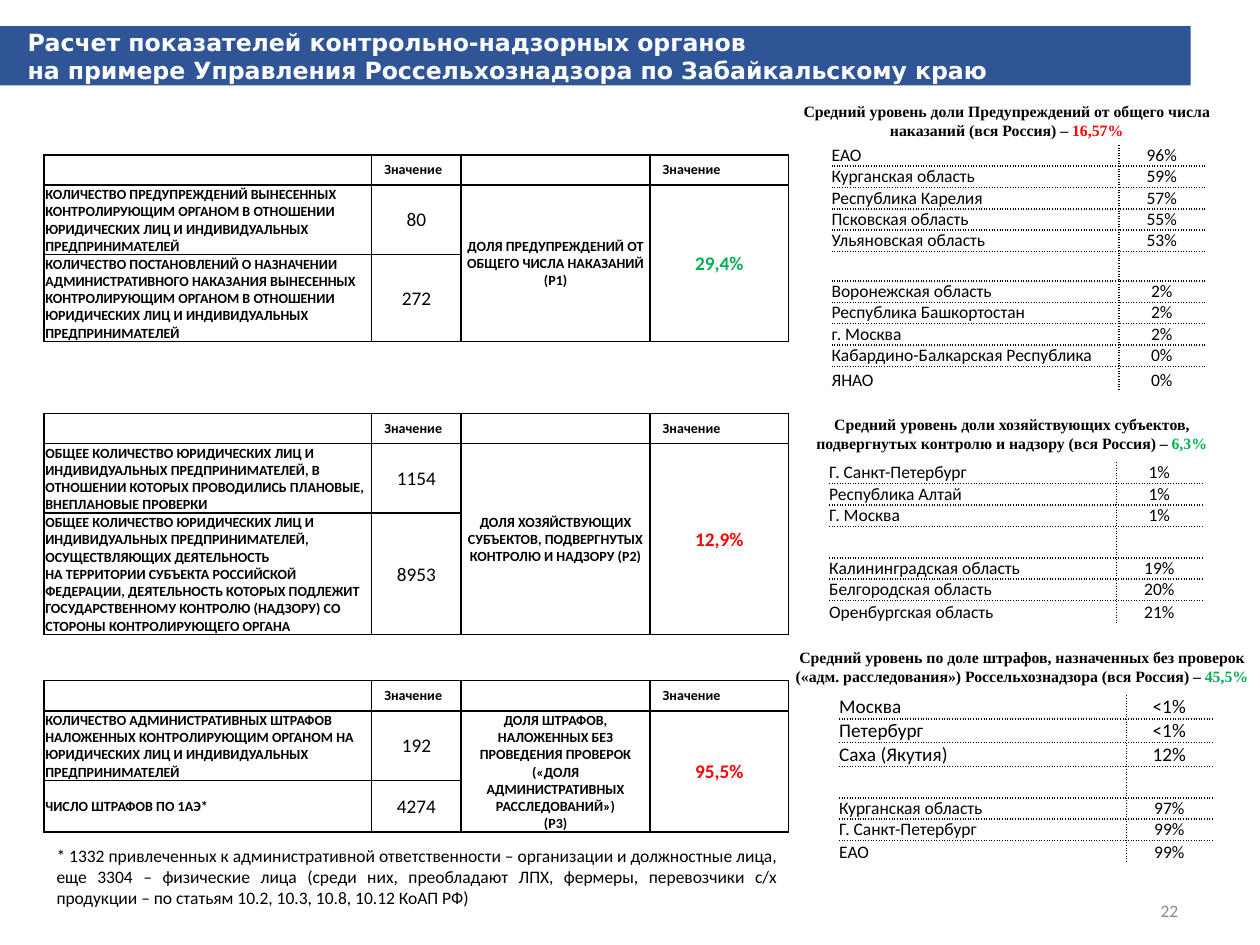
from dataclasses import dataclass

from lxml import etree
from pptx import Presentation
from pptx.dml.color import RGBColor
from pptx.enum.shapes import MSO_SHAPE
from pptx.enum.text import MSO_ANCHOR, PP_ALIGN
from pptx.oxml.ns import qn
from pptx.util import Pt

RECT = MSO_SHAPE.RECTANGLE
TOP, MID, LOW = MSO_ANCHOR.TOP, MSO_ANCHOR.MIDDLE, MSO_ANCHOR.BOTTOM
LEFT, MIDDLE, RIGHT, FLUSH = PP_ALIGN.LEFT, PP_ALIGN.CENTER, PP_ALIGN.RIGHT, PP_ALIGN.JUSTIFY
BLACK = RGBColor(0, 0, 0)
WHITE = RGBColor(255, 255, 255)
BLUE = RGBColor(0x2F, 0x55, 0x97)
GREEN = RGBColor(0, 0xB0, 0x50)
RED = RGBColor(255, 0, 0)
GRAY = RGBColor(0x8C, 0x8C, 0x8C)
WIDE = (7.2, 3.6, 7.2, 3.6)
TIGHT = (0.72, 0.72, 0.72, 0)
BARE = (0, 0, 0, 0)


@dataclass
class Panel:
    top: float
    rows: tuple
    labels: tuple
    counts: tuple
    title: str
    share: str
    color: RGBColor


@dataclass
class Ranking:
    left: float
    top: float
    high: tuple
    low: tuple
    size: int
    gap: float
    last: float
    lines: tuple
    box: tuple
    title: str
    mean: str
    color: RGBColor


PANELS = [
    Panel(88.5, (17.2, 39.8, 49.8), (
        "КОЛИЧЕСТВО ПРЕДУПРЕЖДЕНИЙ ВЫНЕСЕННЫХ КОНТРОЛИРУЮЩИМ ОРГАНОМ В ОТНОШЕНИИ ЮРИДИЧЕСКИХ ЛИЦ И ИНДИВИДУАЛЬНЫХ ПРЕДПРИНИМАТЕЛЕЙ",
        "КОЛИЧЕСТВО ПОСТАНОВЛЕНИЙ О НАЗНАЧЕНИИ АДМИНИСТРАТИВНОГО НАКАЗАНИЯ ВЫНЕСЕННЫХ КОНТРОЛИРУЮЩИМ ОРГАНОМ В ОТНОШЕНИИ ЮРИДИЧЕСКИХ ЛИЦ И ИНДИВИДУАЛЬНЫХ ПРЕДПРИНИМАТЕЛЕЙ"),
        ("80", "272"), "ДОЛЯ ПРЕДУПРЕЖДЕНИЙ ОТ ОБЩЕГО ЧИСЛА НАКАЗАНИЙ (P1)", "29,4%", GREEN),
    Panel(236.2, (17.2, 39.8, 69.5), (
        "ОБЩЕЕ КОЛИЧЕСТВО ЮРИДИЧЕСКИХ ЛИЦ И\vИНДИВИДУАЛЬНЫХ ПРЕДПРИНИМАТЕЛЕЙ, В ОТНОШЕНИИ КОТОРЫХ ПРОВОДИЛИСЬ ПЛАНОВЫЕ, ВНЕПЛАНОВЫЕ ПРОВЕРКИ",
        "ОБЩЕЕ КОЛИЧЕСТВО ЮРИДИЧЕСКИХ ЛИЦ И ИНДИВИДУАЛЬНЫХ ПРЕДПРИНИМАТЕЛЕЙ, ОСУЩЕСТВЛЯЮЩИХ ДЕЯТЕЛЬНОСТЬ\vНА ТЕРРИТОРИИ СУБЪЕКТА РОССИЙСКОЙ ФЕДЕРАЦИИ, ДЕЯТЕЛЬНОСТЬ КОТОРЫХ ПОДЛЕЖИТ ГОСУДАРСТВЕННОМУ КОНТРОЛЮ (НАДЗОРУ) СО СТОРОНЫ КОНТРОЛИРУЮЩЕГО ОРГАНА"),
        ("1154", "8953"), "ДОЛЯ ХОЗЯЙСТВУЮЩИХ СУБЪЕКТОВ, ПОДВЕРГНУТЫХ КОНТРОЛЮ И НАДЗОРУ (P2)", "12,9%", RED),
    Panel(389, (17.2, 39.8, 29.5), (
        "КОЛИЧЕСТВО АДМИНИСТРАТИВНЫХ ШТРАФОВ НАЛОЖЕННЫХ КОНТРОЛИРУЮЩИМ ОРГАНОМ НА ЮРИДИЧЕСКИХ ЛИЦ И ИНДИВИДУАЛЬНЫХ ПРЕДПРИНИМАТЕЛЕЙ",
        "ЧИСЛО ШТРАФОВ ПО 1АЭ*"),
        ("192", "4274"),
        "ДОЛЯ ШТРАФОВ, НАЛОЖЕННЫХ БЕЗ ПРОВЕДЕНИЯ ПРОВЕРОК («ДОЛЯ АДМИНИСТРАТИВНЫХ РАССЛЕДОВАНИЙ»)\n(P3)",
        "95,5%", RED),
]

RANKINGS = [
    Ranking(475.2, 82.8,
            (("ЕАО", "96%"), ("Курганская область", "59%"), ("Республика Карелия", "57%"),
             ("Псковская область", "55%"), ("Ульяновская область", "53%")),
            (("Воронежская область", "2%"), ("Республика Башкортостан", "2%"), ("г. Москва", "2%"),
             ("Кабардино-Балкарская Республика", "0%"), ("ЯНАО", "0%")),
            10, 15.2, 14, (12.2, 12.2), (433.4, 54.7, 283.7, 28.8),
            "Средний уровень доли Предупреждений от общего числа наказаний (вся Россия) – ", "16,57%", RED),
    Ranking(473.8, 264.2,
            (("Г. Санкт-Петербург", "1%"), ("Республика Алтай", "1%"), ("Г. Москва", "1%")),
            (("Калининградская область", "19%"), ("Белгородская область", "20%"), ("Оренбургская область", "21%")),
            10, 18, 13, (12.2, 12.2), (433.4, 233.3, 289.4, 28.8),
            "Средний уровень доли хозяйствующих субъектов,\nподвергнутых контролю и надзору (вся Россия) – ",
            "6,3%", GREEN),
    Ranking(479.5, 397.4,
            (("Москва", "<1%"), ("Петербург", "<1%"), ("Саха (Якутия)", "12%")),
            (("Курганская область", "97%"), ("Г. Санкт-Петербург", "99%"), ("ЕАО", "99%")),
            11, 18, 13, (13.5, 12.2), (445, 366.5, 277.9, 28.8),
            "Средний уровень по доле штрафов, назначенных без проверок («адм. расследования») Россельхознадзора (вся Россия) – ",
            "45,5%", GREEN),
]


def write(frame, text: str, *, size=8, face="Calibri", color=BLACK, bold=False,
          align=LEFT, tail="", tint=BLACK) -> None:
    def add(part, shade):
        run = para.add_run()
        run.text = part
        font = run.font
        font.size, font.name, font.bold = Pt(size), face, bold
        font.color.rgb = shade

    for row, line in enumerate(text.split("\n")):
        para = frame.paragraphs[0] if row == 0 else frame.add_paragraph()
        para.alignment = align
        for turn, part in enumerate(line.split("\v")):
            if turn:
                para.add_line_break()
            add(part, color)
    if tail:
        add(tail, tint)


def add_box(slide, spot: tuple, text: str, *, pad=WIDE, anchor=TOP, **style) -> None:
    frame = slide.shapes.add_textbox(*map(Pt, spot)).text_frame
    frame.word_wrap = True
    frame.vertical_anchor = anchor
    frame.margin_left, frame.margin_top, frame.margin_right, frame.margin_bottom = map(Pt, pad)
    write(frame, text, **style)


def add_edge(cell, side: str, shown: bool, dash: str) -> None:
    line = etree.SubElement(cell._tc.get_or_add_tcPr(), qn("a:ln" + side), w=str(Pt(1)))
    if not shown:
        etree.SubElement(line, qn("a:noFill"))
        return
    fill = etree.SubElement(line, qn("a:solidFill"))
    etree.SubElement(fill, qn("a:srgbClr"), val=str(BLACK))
    etree.SubElement(line, qn("a:prstDash"), val=dash)


def add_grid(slide, left: float, top: float, cols: tuple, rows: tuple, *, framed: bool, dash: str):
    shape = slide.shapes.add_table(len(rows), len(cols), Pt(left), Pt(top), Pt(sum(cols)), Pt(sum(rows)))
    grid = shape.table
    grid.first_row = grid.horz_banding = False
    for col, width in zip(grid.columns, cols):
        col.width = Pt(width)
    for r, height in enumerate(rows):
        grid.rows[r].height = Pt(height)
        for c in range(len(cols)):
            cell = grid.cell(r, c)
            inner = {"L": c > 0, "R": c < len(cols) - 1, "T": r > 0, "B": r < len(rows) - 1}
            for side, shown in inner.items():
                add_edge(cell, side, framed or shown, dash)
            cell.fill.background()
            etree.SubElement(cell.text_frame.paragraphs[0]._p, qn("a:endParaRPr"), sz="800")
    return grid


def fill_cell(cell, text: str, *, pad=TIGHT, anchor=MID, **style) -> None:
    cell.margin_left, cell.margin_top, cell.margin_right, cell.margin_bottom = map(Pt, pad)
    cell.vertical_anchor = anchor
    write(cell.text_frame, text, **style)


def add_panel(slide, item: Panel) -> None:
    grid = add_grid(slide, 25.2, item.top, (187.2, 51.12, 108, 79.2), item.rows, framed=True, dash="solid")
    for col in (1, 3):
        fill_cell(grid.cell(0, col), "Значение", pad=WIDE, anchor=TOP, bold=True)
        grid.cell(1, col - (col == 1) + (col == 1) * 2 if col == 1 else col).merge(grid.cell(2, 2 if col == 1 else col))
    for row, (label, count) in enumerate(zip(item.labels, item.counts), 1):
        fill_cell(grid.cell(row, 0), label, bold=True)
        fill_cell(grid.cell(row, 1), count, size=11, align=MIDDLE)
    fill_cell(grid.cell(1, 2), item.title, bold=True, align=MIDDLE)
    fill_cell(grid.cell(1, 3), item.share, size=11, color=item.color, bold=True, align=MIDDLE)


def add_ranking(slide, item: Ranking) -> None:
    high, low = item.lines
    rows = (high,) * len(item.high) + (item.gap,) + (low,) * (len(item.low) - 1) + (item.last,)
    grid = add_grid(slide, item.left, item.top, (164.16, 48.96), rows, framed=False, dash="sysDot")
    for start, group, size in ((0, item.high, item.size), (len(item.high) + 1, item.low, 10)):
        for row, (name, value) in enumerate(group, start):
            fill_cell(grid.cell(row, 0), name, pad=BARE, anchor=LOW, size=size)
            fill_cell(grid.cell(row, 1), value, pad=BARE, anchor=LOW, size=size, align=MIDDLE)
    add_box(slide, item.box, item.title, size=9, face="Times New Roman", bold=True,
            align=MIDDLE, tail=item.mean, tint=item.color)


def main() -> None:
    deck = Presentation()
    deck.slide_width, deck.slide_height = Pt(720), Pt(540)
    slide = deck.slides.add_slide(deck.slide_layouts[6])
    band = slide.shapes.add_shape(RECT, Pt(0), Pt(15), Pt(680.4), Pt(33.8))
    band.shadow.inherit = False
    band.fill.solid()
    band.fill.fore_color.rgb = BLUE
    band.line.fill.background()
    add_box(slide, (8.64, 15, 669, 33.8),
            "Расчет показателей контрольно-надзорных органов\nна примере Управления Россельхознадзора по Забайкальскому краю",
            pad=(7.2, 0, 7.2, 0), anchor=MID, size=13.5, face="DejaVu Sans", color=WHITE, bold=True, align=FLUSH)
    add_box(slide, (617.8, 500.4, 62.6, 39.6), "22", anchor=MID, size=10, color=GRAY, align=RIGHT)
    for item in PANELS:
        add_panel(slide, item)
    for item in RANKINGS:
        add_ranking(slide, item)
    add_box(slide, (25.2, 479.5, 425.5, 43.9),
            "* 1332 привлеченных к административной ответственности – организации и должностные лица, еще 3304 – физические лица (среди них, преобладают ЛПХ, фермеры, перевозчики с/х продукции – по статьям 10.2, 10.3, 10.8, 10.12 КоАП РФ)",
            size=10, align=FLUSH)
    deck.save("out.pptx")


if __name__ == "__main__":
    main()
